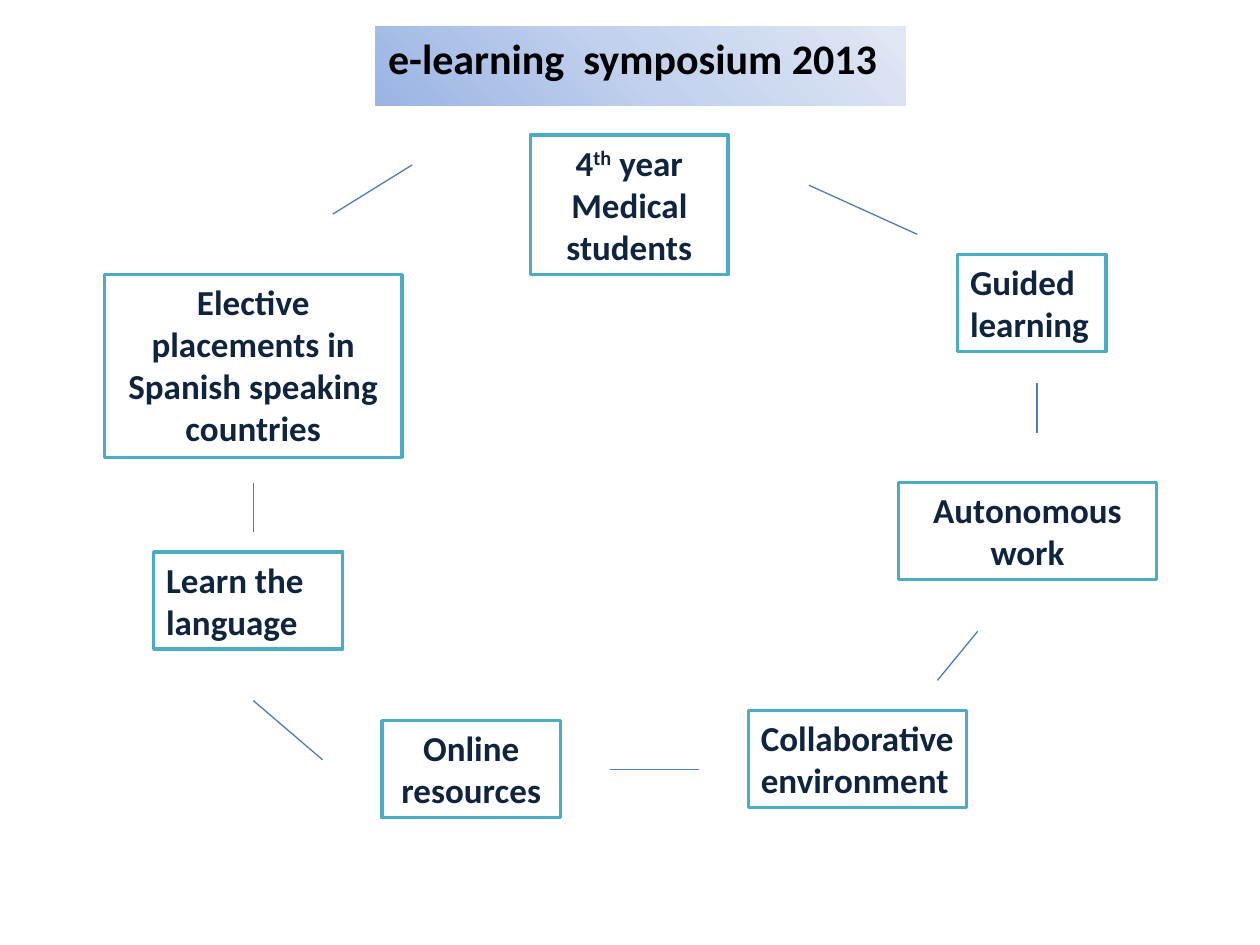
import pptx
import pptx.dml.color
import pptx.enum.shapes
import pptx.enum.text
import pptx.oxml
import pptx.oxml.ns
import pptx.util
from dataclasses import dataclass

Inches = pptx.util.Inches
Pt = pptx.util.Pt
Align = pptx.enum.text.PP_ALIGN
Anchor = pptx.enum.text.MSO_ANCHOR
AutoSize = pptx.enum.text.MSO_AUTO_SIZE


@dataclass(frozen=True)
class Theme:
    font: str = "Calibri"
    title_size: int = 24
    body_size: int = 20
    title_ink: str = "000000"
    ink: str = "0F243E"
    paper: str = "FFFFFF"
    border: str = "4BACC6"
    link: str = "4B7EBC"
    banner: tuple = ((0, "9AB5E4"), (50, "C2D1ED"), (100, "E1E8F5"))


theme = Theme()


def rgb(value):
    return pptx.dml.color.RGBColor.from_string(value)


def add_text(para, text, size=theme.body_size, color=theme.ink, raised=False):
    span = para.add_run()
    span.text = text
    span.font.name = theme.font
    span.font.size = Pt(size)
    span.font.bold = True
    span.font.color.rgb = rgb(color)
    if raised:
        span.font._element.set("baseline", "30000")


deck = pptx.Presentation()
deck.slide_width, deck.slide_height = Inches(10), Inches(7.5)
page = deck.slides.add_slide(deck.slide_layouts[5])

# Stages of the cycle, clockwise from the top: runs, left, top, width, height, alignment
stages = [
    (["4", "th", " year Medical students"], 4.21, 1.07, 1.57, 1.11, Align.CENTER),
    (["Guided learning"], 7.6, 2.02, 1.18, 0.77, Align.LEFT),
    (["Autonomous work"], 7.13, 3.83, 2.05, 0.77, Align.CENTER),
    (["Collaborative environment"], 5.94, 5.64, 1.73, 0.77, Align.LEFT),
    (["Online resources"], 3.03, 5.72, 1.42, 0.77, Align.CENTER),
    (["Learn the language"], 1.22, 4.38, 1.5, 0.77, Align.LEFT),
    (["Elective placements in Spanish speaking countries"],
     0.83, 2.18, 2.36, 1.45, Align.CENTER),
]
for texts, left, top, width, height, alignment in stages:
    box = page.shapes.add_shape(
        pptx.enum.shapes.MSO_SHAPE.RECTANGLE,
        Inches(left), Inches(top), Inches(width), Inches(height))
    box.shadow.inherit = False
    box.fill.solid()
    box.fill.fore_color.rgb = rgb(theme.paper)
    box.line.color.rgb = rgb(theme.border)
    box.line.width = Pt(2)
    frame = box.text_frame
    frame.word_wrap = True
    frame.auto_size = AutoSize.SHAPE_TO_FIT_TEXT
    frame.vertical_anchor = Anchor.TOP
    para = frame.paragraphs[0]
    para.alignment = alignment
    for text in texts:
        add_text(para, text, raised=text == "th")

# Title banner, shaded outward from its bottom left corner
title = page.shapes.title
title.left, title.top = Inches(2.98), Inches(0.21)
title.width, title.height = Inches(4.21), Inches(0.63)
stops = "".join(
    f'<a:gs pos="{position * 1000}"><a:srgbClr val="{color}"/></a:gs>'
    for position, color in theme.banner)
gradient = pptx.oxml.parse_xml(
    f'<a:gradFill {pptx.oxml.ns.nsdecls("a")}><a:gsLst>{stops}</a:gsLst>'
    '<a:path path="circle"><a:fillToRect t="100000" r="100000"/></a:path></a:gradFill>')
title._element.spPr.append(gradient)
frame = title.text_frame
frame.word_wrap = True
frame.auto_size = AutoSize.NONE
frame.vertical_anchor = Anchor.TOP
para = frame.paragraphs[0]
para.alignment = Align.LEFT
para.space_before = Pt(4.8)
add_text(para, "e-learning  symposium 2013", size=theme.title_size, color=theme.title_ink)

# Free-standing links between neighbouring stages, clockwise
links = [
    (6.42, 1.47, 7.28, 1.86),
    (8.23, 3.04, 8.23, 3.44),
    (7.76, 5.01, 7.44, 5.4),
    (4.84, 6.11, 5.55, 6.11),
    (2.01, 5.56, 2.56, 6.03),
    (2.01, 3.83, 2.01, 4.22),
    (2.64, 1.7, 3.27, 1.31),
]
for ends in links:
    link = page.shapes.add_connector(
        pptx.enum.shapes.MSO_CONNECTOR.STRAIGHT, *map(Inches, ends))
    link.line.color.rgb = rgb(theme.link)
    link.line.width = Pt(0.75)
    link._element.spPr.append(pptx.oxml.parse_xml(
        f'<a:effectLst {pptx.oxml.ns.nsdecls("a")}/>'))

deck.save("out.pptx")
